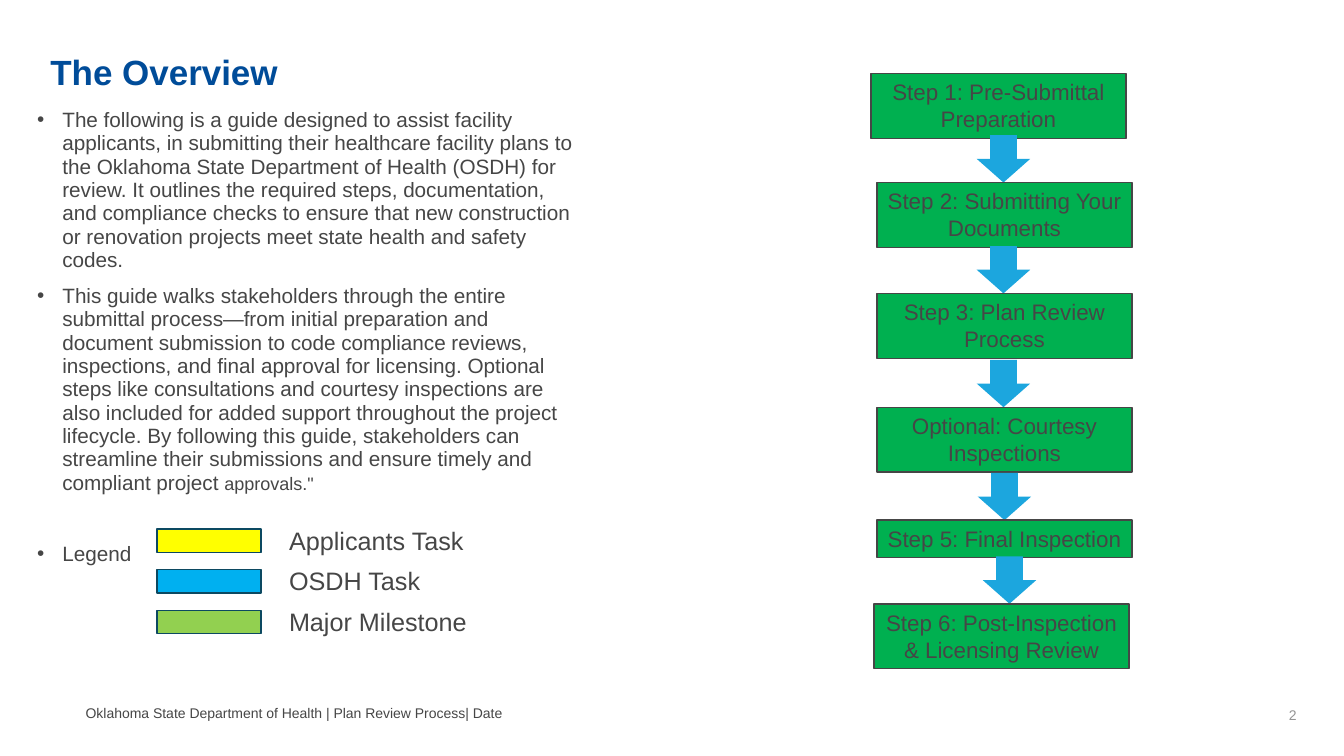
from lxml.etree import SubElement
from pptx import Presentation
from pptx.dml.color import RGBColor
from pptx.enum.shapes import MSO_SHAPE
from pptx.enum.text import MSO_ANCHOR, PP_ALIGN
from pptx.oxml.ns import qn
from pptx.util import Pt

GRAY = RGBColor(0x46, 0x46, 0x46)
PALE_GRAY = RGBColor(0x94, 0x94, 0x94)
TITLE_BLUE = RGBColor(0x00, 0x4C, 0x99)
STEP_GREEN = RGBColor(0x00, 0xB0, 0x50)
ARROW_BLUE = RGBColor(0x1C, 0xA6, 0xDE)
LEGEND_LINE = RGBColor(0x0C, 0x49, 0x61)
YELLOW = RGBColor(0xFF, 0xFF, 0x00)
SKY_BLUE = RGBColor(0x00, 0xB0, 0xF0)
LIGHT_GREEN = RGBColor(0x92, 0xD0, 0x50)

OVERVIEW = [
    ("The following is a guide designed to assist facility applicants, in submitting their "
     "healthcare facility plans to the Oklahoma State Department of Health (OSDH) for review. "
     "It outlines the required steps, documentation, and compliance checks to ensure that new "
     "construction or renovation projects meet state health and safety codes.", "", 0),
    ("This guide walks stakeholders through the entire submittal process—from initial "
     "preparation and document submission to code compliance reviews, inspections, and final "
     "approval for licensing. Optional steps like consultations and courtesy inspections are "
     "also included for added support throughout the project lifecycle. By following this "
     "guide, stakeholders can streamline their submissions and ensure timely and compliant "
     "project ", "approvals.\"", 9),
    ("Legend", "", 34),
]
LEGEND = [("Applicants Task", YELLOW), ("OSDH Task", SKY_BLUE), ("Major Milestone", LIGHT_GREEN)]

# label, left offset, top offset, height, centre of the arrow leading in
STEPS = [
    ("Step 1: Pre-Submittal Preparation", 0, 0, 46.4, None),
    ("Step 2: Submitting Your Documents", 4.3, 77.8, 46.4, 94.7),
    ("Step 3: Plan Review Process", 4.3, 157, 46.4, 94.7),
    ("Optional: Courtesy Inspections", 4.3, 238.3, 46.4, 94.7),
    ("Step 5: Final Inspection", 4.3, 319, 26.6, 95.4),
    ("Step 6: Post-Inspection & Licensing Review", 2.2, 378.7, 46.4, 99),
]


def style(para, size, color=GRAY, bold=False):
    para.font.name = "Arial"
    para.font.size = Pt(size)
    para.font.bold = bold
    para.font.color.rgb = color


def add_text(page, box, text, size, color=GRAY, bold=False, inset=0,
             anchor=MSO_ANCHOR.TOP, align=PP_ALIGN.LEFT):
    frame = page.shapes.add_textbox(*map(Pt, box)).text_frame
    frame.word_wrap = True
    frame.margin_left = Pt(inset)
    frame.vertical_anchor = anchor
    para = frame.paragraphs[0]
    para.text = text
    para.alignment = align
    style(para, size, color, bold)
    return frame


def add_block(page, kind, box, fill, line=None):
    block = page.shapes.add_shape(kind, *map(Pt, box))
    block.shadow.inherit = False
    block.fill.solid()
    block.fill.fore_color.rgb = fill
    if line is None:
        block.line.fill.background()
    else:
        block.line.color.rgb = line
        block.line.width = Pt(1)
    return block


def add_overview(page, box):
    frame = page.shapes.add_textbox(*map(Pt, box)).text_frame
    frame.word_wrap = True
    frame.margin_left = 0
    for index, (text, small_text, gap) in enumerate(OVERVIEW):
        para = frame.add_paragraph() if index else frame.paragraphs[0]
        para.line_spacing = 0.94
        para.space_before = Pt(gap)
        properties = para._p.get_or_add_pPr()
        properties.set("marL", str(Pt(18)))
        properties.set("indent", str(-Pt(18)))
        SubElement(properties, qn("a:buFont"), typeface="Arial")
        SubElement(properties, qn("a:buChar"), char="•")
        style(para, 14.8)
        para.add_run().text = text
        if small_text:
            span = para.add_run()
            span.text = small_text
            span.font.size = Pt(12.9)


def add_legend(page, box):
    left, top, width, height = box
    pitch = height / len(LEGEND)
    for index, (label, color) in enumerate(LEGEND):
        row_top = top + index * pitch
        add_block(page, MSO_SHAPE.RECTANGLE, (left, row_top + 6.5, 74.2, 16.6), color, LEGEND_LINE)
        add_text(page, (left + 87.1, row_top, width - 87.1, pitch), label, 18, inset=7.2)


def add_steps(page, box):
    left, top, width = box
    arrow_width, arrow_height = 38.2, 33.8
    for label, shift, drop, height, arrow_center in STEPS:
        if arrow_center is not None:
            arrow_box = (left + arrow_center - arrow_width / 2, top + drop - arrow_height,
                         arrow_width, arrow_height)
            add_block(page, MSO_SHAPE.DOWN_ARROW, arrow_box, ARROW_BLUE)
        step = add_block(page, MSO_SHAPE.RECTANGLE, (left + shift, top + drop, width, height),
                         STEP_GREEN, GRAY)
        frame = step.text_frame
        frame.word_wrap = True
        frame.vertical_anchor = MSO_ANCHOR.TOP
        para = frame.paragraphs[0]
        para.text = label
        para.alignment = PP_ALIGN.CENTER
        style(para, 16)


def add_footer(page, box):
    left, top, width, height = box
    add_text(page, (left, top, 640, height), "Oklahoma State Department of Health | Plan Review Process| Date",
             10, anchor=MSO_ANCHOR.MIDDLE)
    add_text(page, (left + width - 216, top + 1, 216, height), "2", 10, PALE_GRAY,
             anchor=MSO_ANCHOR.MIDDLE, align=PP_ALIGN.RIGHT)


def main():
    deck = Presentation()
    deck.slide_width, deck.slide_height = Pt(960), Pt(540)
    page = deck.slides.add_slide(deck.slide_layouts[6])
    add_footer(page, (61.2, 501.5, 872, 16))
    add_text(page, (36, 32.4, 897, 66), "The Overview", 25, TITLE_BLUE, bold=True)
    add_overview(page, (26.6, 74.2, 396, 342.7))
    add_legend(page, (112.3, 371.5, 247.7, 87))
    add_steps(page, (622.1, 52.6, 182.2))
    deck.save("out.pptx")


if __name__ == "__main__":
    main()
